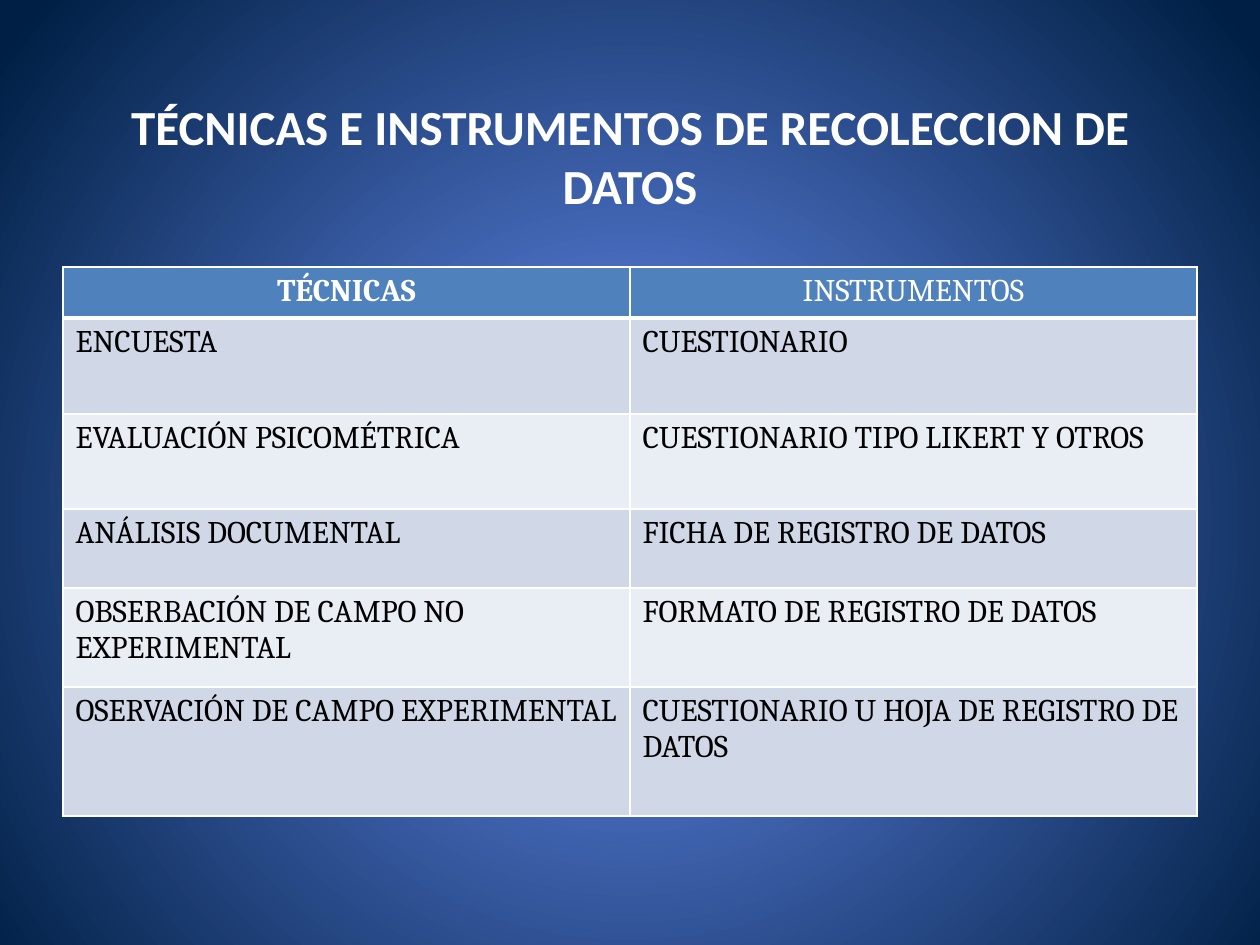
from dataclasses import dataclass

from pptx import Presentation
from pptx.dml.color import RGBColor
from pptx.enum.text import MSO_ANCHOR, MSO_AUTO_SIZE, PP_ALIGN
from pptx.oxml import parse_xml
from pptx.oxml.ns import nsdecls
from pptx.util import Emu, Pt

PX = 914400 // 126


@dataclass(frozen=True)
class Theme:
    title_font: str = "Calibri"
    table_font: str = "Cambria"
    title_size: int = 28
    table_size: int = 18
    light: str = "FFFFFF"
    dark: str = "000000"
    header: str = "4F81BD"
    bands: tuple = ("D0D8E8", "E9EDF4")
    background: tuple = ((0, "4D75D6"), (25, "4E72C7"), (100, "001F44"))
    border: int = 1
    header_border: int = 3


def px(length):
    return Emu(length * PX)


def set_attributes(target, values):
    for name, value in values.items():
        setattr(target, name, value)


class SlideBuilder:
    def __init__(self, presentation, theme):
        self.theme = theme
        self.slide = presentation.slides.add_slide(presentation.slide_layouts[5])

    def background(self):
        stops = "".join(
            f'<a:gs pos="{position * 1000}"><a:srgbClr val="{color}"/></a:gs>'
            for position, color in self.theme.background
        )
        background = parse_xml(
            f'<p:bg {nsdecls("p", "a")}><p:bgPr><a:gradFill rotWithShape="1">'
            f'<a:gsLst>{stops}</a:gsLst><a:path path="circle">'
            '<a:fillToRect l="10000" t="110000" r="10000" b="100000"/></a:path>'
            "</a:gradFill><a:effectLst/></p:bgPr></p:bg>"
        )
        self.slide.element.cSld.insert(0, background)

    def text(self, text_frame, text, alignment, color, **font):
        text_frame.text = text
        for paragraph in text_frame.paragraphs:
            paragraph.alignment = alignment
            for run in paragraph.runs:
                set_attributes(run.font, font)
                run.font.color.rgb = RGBColor.from_string(color)

    def title(self, text, left, top, width, height):
        shape = self.slide.shapes.title
        set_attributes(shape, {
            "left": px(left), "top": px(top),
            "width": px(width), "height": px(height),
        })
        set_attributes(shape.text_frame, {
            "margin_left": 0, "margin_right": 0, "margin_bottom": 0,
            "margin_top": Pt(3.6), "word_wrap": True,
            "auto_size": MSO_AUTO_SIZE.NONE,
            "vertical_anchor": MSO_ANCHOR.BOTTOM,
        })
        self.text(shape.text_frame, text, PP_ALIGN.CENTER, self.theme.light,
                  name=self.theme.title_font, size=Pt(self.theme.title_size), bold=True)

    def borders(self, cell, bottom):
        widths = dict.fromkeys("LRT", self.theme.border) | {"B": bottom}
        for position, (side, width) in enumerate(widths.items()):
            line = parse_xml(
                f'<a:ln{side} {nsdecls("a")} w="{Pt(width)}"><a:solidFill>'
                f'<a:srgbClr val="{self.theme.light}"/></a:solidFill></a:ln{side}>'
            )
            cell._tc.get_or_add_tcPr().insert(position, line)

    def table(self, rows, heights, left, top, width):
        theme = self.theme
        table = self.slide.shapes.add_table(
            len(rows), len(rows[0]), px(left), px(top), px(width), px(sum(heights))
        ).table
        for row_index, (texts, height) in enumerate(zip(rows, heights)):
            table.rows[row_index].height = px(height)
            is_header = row_index == 0
            fill = theme.header if is_header else theme.bands[(row_index - 1) % 2]
            for column_index, text in enumerate(texts):
                cell = table.cell(row_index, column_index)
                cell.fill.solid()
                cell.fill.fore_color.rgb = RGBColor.from_string(fill)
                self.borders(cell, theme.header_border if is_header else theme.border)
                self.text(
                    cell.text_frame, text,
                    PP_ALIGN.CENTER if is_header else PP_ALIGN.LEFT,
                    theme.light if is_header else theme.dark,
                    name=theme.table_font, size=Pt(theme.table_size),
                    bold=is_header and column_index == 0,
                )


def main():
    presentation = Presentation()
    set_attributes(presentation, {"slide_width": px(1260), "slide_height": px(945)})
    builder = SlideBuilder(presentation, Theme())
    builder.background()
    builder.title("TÉCNICAS E INSTRUMENTOS DE RECOLECCION DE DATOS", 63, 45, 1134, 169)
    rows = [
        ("TÉCNICAS", "INSTRUMENTOS"),
        ("ENCUESTA", "CUESTIONARIO"),
        ("EVALUACIÓN PSICOMÉTRICA", "CUESTIONARIO TIPO LIKERT Y OTROS"),
        ("ANÁLISIS DOCUMENTAL", "FICHA DE REGISTRO DE DATOS"),
        ("OBSERBACIÓN DE CAMPO NO\nEXPERIMENTAL", "FORMATO DE REGISTRO DE DATOS"),
        ("OSERVACIÓN DE CAMPO EXPERIMENTAL", "CUESTIONARIO U HOJA DE REGISTRO DE DATOS"),
    ]
    builder.table(rows, (51, 96, 95, 79, 99, 129), 63, 267, 1134)
    presentation.save("out.pptx")


if __name__ == "__main__":
    main()
